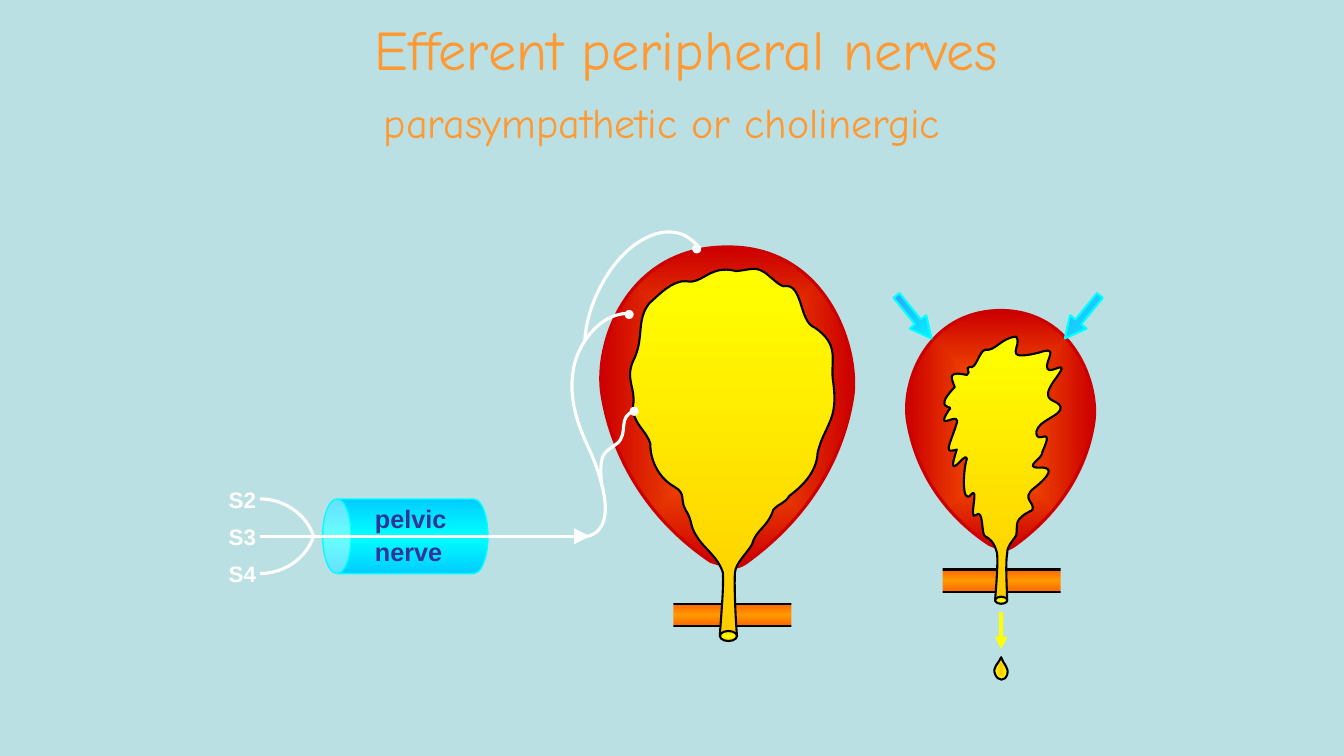
from lxml import etree
from pptx import Presentation
from pptx.dml.color import RGBColor
from pptx.enum import shapes, text
from pptx.oxml.ns import qn
from pptx.util import Inches, Pt

SHAPE = shapes.MSO_SHAPE
SKY = RGBColor(0xBB, 0xE0, 0xE3)
TITLE_ORANGE = RGBColor(0xFF, 0x99, 0x33)
MUSCLE_ORANGE = RGBColor(0xFF, 0x66, 0x00)
SPHINCTER_ORANGE = RGBColor(0xFF, 0x99, 0x00)
RED = RGBColor(0xCC, 0x00, 0x00)
YELLOW = RGBColor(0xFF, 0xFF, 0x00)
GOLD = RGBColor(0xFF, 0xCC, 0x00)
BLUE = RGBColor(0x33, 0x99, 0xFF)
LIGHT_BLUE = RGBColor(0x00, 0xCC, 0xFF)
CYAN = RGBColor(0x00, 0xFF, 0xFF)
NAVY = RGBColor(0x33, 0x33, 0x99)
WHITE = RGBColor(0xFF, 0xFF, 0xFF)
BLACK = RGBColor(0x00, 0x00, 0x00)

# Outlines: a start point, then two control points and an end point per curve.
FULL_BODY = [
    (7.05, 5.57), (6.35, 5.1), (6.05, 4.43), (5.97, 3.91), (5.89, 3.4), (6.22, 2.45), (7.21, 2.45),
    (8.2, 2.44), (8.52, 3.45), (8.46, 3.92), (8.39, 4.4), (8.13, 5.06), (7.39, 5.59),
    (7.27, 5.66), (7.22, 5.62), (7.05, 5.57)]
FULL_LUMEN = [
    (7.14, 6.31), (7.15, 6.13), (7.18, 5.83), (7.17, 5.68), (7.12, 5.52), (6.97, 5.43), (6.91, 5.32),
    (6.84, 5.22), (6.87, 5.16), (6.8, 5.06), (6.74, 4.95), (6.81, 4.9), (6.69, 4.83),
    (6.56, 4.76), (6.45, 4.6), (6.45, 4.4), (6.42, 4.28), (6.26, 4.19), (6.28, 4.02),
    (6.31, 3.85), (6.19, 3.76), (6.29, 3.56), (6.39, 3.35), (6.31, 3.17), (6.44, 3.01),
    (6.54, 2.92), (6.67, 2.78), (6.81, 2.79), (6.96, 2.83), (7.04, 2.62), (7.3, 2.69),
    (7.43, 2.68), (7.46, 2.65), (7.54, 2.68), (7.62, 2.71), (7.7, 2.82), (7.77, 2.84),
    (7.97, 2.8), (7.92, 3.19), (8.08, 3.25), (8.33, 3.42), (8.24, 3.57), (8.26, 3.76),
    (8.29, 3.96), (8.28, 4.09), (8.22, 4.21), (8.17, 4.33), (8.15, 4.34), (8.11, 4.49),
    (8.1, 4.71), (7.92, 4.85), (7.83, 4.92), (7.77, 5.01), (7.74, 4.98), (7.67, 5.06),
    (7.61, 5.24), (7.5, 5.25), (7.46, 5.4), (7.41, 5.49), (7.3, 5.58), (7.29, 5.68),
    (7.28, 5.83), (7.3, 6.2), (7.31, 6.31), (7.2, 6.33), (7.22, 6.32), (7.14, 6.31)]
EMPTY_BODY = [
    (9.81, 5.4), (9.28, 5.05), (9.06, 4.56), (9, 4.17), (8.94, 3.79), (9.19, 3.09), (9.92, 3.08),
    (10.66, 3.08), (10.9, 3.83), (10.85, 4.18), (10.8, 4.54), (10.6, 5.03), (10.05, 5.42),
    (9.97, 5.47), (9.93, 5.45), (9.81, 5.4)]
EMPTY_LUMEN = [
    (9.87, 5.96), (9.88, 5.82), (9.9, 5.6), (9.89, 5.49), (9.86, 5.37), (9.81, 5.34), (9.77, 5.32),
    (9.73, 5.3), (9.76, 5.04), (9.68, 5.11), (9.6, 5.18), (9.72, 4.8), (9.63, 4.91),
    (9.54, 5.01), (9.55, 4.68), (9.59, 4.55), (9.58, 4.46), (9.37, 4.83), (9.49, 4.46),
    (9.36, 4.5), (9.41, 4.44), (9.48, 4.23), (9.56, 4.03), (9.25, 4.32), (9.41, 4.07),
    (9.49, 4.01), (9.23, 4.09), (9.47, 3.84), (9.43, 3.74), (9.4, 3.68), (9.59, 3.72),
    (9.64, 3.69), (9.56, 3.65), (9.62, 3.64), (9.68, 3.67), (9.71, 3.49), (9.77, 3.47),
    (9.87, 3.49), (9.93, 3.35), (10.08, 3.34), (10.15, 3.43), (9.92, 3.59), (10.3, 3.5),
    (10.53, 3.42), (10.35, 3.59), (10.39, 3.66), (10.42, 3.72), (10.64, 3.53), (10.46, 3.77),
    (10.29, 4.01), (10.5, 3.95), (10.52, 4.04), (10.53, 4.13), (10.31, 4.16), (10.28, 4.28),
    (10.27, 4.44), (10.47, 4.19), (10.34, 4.48), (10.35, 4.55), (10.14, 4.64), (10.31, 4.64),
    (10.47, 4.63), (10.4, 4.73), (10.26, 4.84), (10.12, 4.95), (10.27, 4.98), (10.24, 5.06),
    (10.04, 5.16), (10.1, 5.2), (10.08, 5.31), (10.04, 5.38), (9.99, 5.41), (9.99, 5.49),
    (9.97, 5.6), (9.99, 5.88), (9.99, 5.96), (9.91, 5.97), (9.93, 5.96), (9.87, 5.96)]
DROP = [(9.93, 6.52), (9.9, 6.59), (9.84, 6.62), (9.87, 6.69), (9.9, 6.76), (9.97, 6.76), (9.99, 6.69),
        (10.01, 6.62), (9.95, 6.59), (9.93, 6.52)]
NERVE_BRANCHES = [
    [(6.94, 2.46), (6.89, 2.4), (6.84, 2.36), (6.78, 2.33), (6.5, 2.21), (6.12, 2.47), (5.92, 2.92),
     (5.85, 3.07), (5.81, 3.23), (5.8, 3.38)],
    [(6.29, 4.08), (6.12, 4.13), (6.24, 4.3), (6.12, 4.4), (6, 4.49), (5.93, 4.48), (5.97, 4.83)],
    [(6.22, 3.11), (5.96, 3.11), (5.71, 3.41), (5.68, 3.71), (5.64, 4.02), (5.77, 4.3), (5.85, 4.47),
     (5.93, 4.65), (6.2, 5.32), (5.75, 5.33)]]
NERVE_ENDINGS = [(6.2, 3.08), (6.87, 2.43), (6.25, 4.04)]
ROOT_Y, ROOT_GAP = 5.32, 0.37


def set_gradient(sp, colors, angle=None, path="rect"):
    """Fill with evenly spaced stops: linear at a clockwise angle, or outward from the centre."""
    sp.fill.gradient()
    grad = sp._element.spPr.find(qn("a:gradFill"))
    for child in list(grad):
        grad.remove(child)
    grad.set("rotWithShape", "0")
    stops = etree.SubElement(grad, qn("a:gsLst"))
    for i, color in enumerate(colors):
        gs = etree.SubElement(stops, qn("a:gs"), pos=str(100000 * i // (len(colors) - 1)))
        etree.SubElement(gs, qn("a:srgbClr"), val=str(color))
    if angle is None:
        centre = etree.SubElement(grad, qn("a:path"), path=path)
        etree.SubElement(centre, qn("a:fillToRect"), dict.fromkeys("ltrb", "50000"))
    else:
        etree.SubElement(grad, qn("a:lin"), ang=str(angle * 60000), scaled="0")


def set_line(sp, color, width):
    sp.line.color.rgb = color
    sp.line.width = Pt(width)


def add_preset(s, kind, left, top, width, height, color=None):
    sp = s.shapes.add_shape(kind, Inches(left), Inches(top), Inches(width), Inches(height))
    sp.shadow.inherit = False
    sp.line.fill.background()
    if color is not None:
        sp.fill.solid()
        sp.fill.fore_color.rgb = color
    return sp


def sample_curves(points, steps=12):
    """Points along a chain of cubic Bezier curves, used to find its extent."""
    for i in range(0, len(points) - 1, 3):
        for step in range(1, steps + 1):
            t = step / steps
            weights = ((1 - t) ** 3, 3 * t * (1 - t) ** 2, 3 * t * t * (1 - t), t ** 3)
            yield tuple(Inches(sum(w * p[axis] for w, p in zip(weights, points[i:i + 4])))
                        for axis in (0, 1))


def add_curve(s, points, color, width):
    """A freeform sized by its sampled extent, whose segments are then made cubic curves."""
    builder = s.shapes.build_freeform(Inches(points[0][0]), Inches(points[0][1]))
    builder.add_line_segments(list(sample_curves(points)), close=points[0] == points[-1])
    sp = builder.convert_to_shape()
    outline = next(sp._element.iter(qn("a:path")))
    for segment in outline.findall(qn("a:lnTo")):
        outline.remove(segment)
    for i in range(1, len(points), 3):
        curve = etree.Element(qn("a:cubicBezTo"))
        for x, y in points[i:i + 3]:
            etree.SubElement(curve, qn("a:pt"), x=str(Inches(x) - sp.left), y=str(Inches(y) - sp.top))
        outline.insert(1 + i // 3, curve)
    sp.shadow.inherit = False
    sp.fill.background()
    set_line(sp, color, width)
    return sp


def add_arrow(s, x1, y1, x2, y2, color, width, head="med"):
    line = s.shapes.add_connector(shapes.MSO_CONNECTOR.STRAIGHT,
                                  Inches(x1), Inches(y1), Inches(x2), Inches(y2))
    set_line(line, color, width)
    etree.SubElement(line.line._get_or_add_ln(), qn("a:tailEnd"), type="triangle", w=head, len=head)
    etree.SubElement(line._element.spPr, qn("a:effectLst"))


def add_label(s, box, words, size, color, font="Arial", bold=True, spacing=None):
    sp = s.shapes.add_textbox(*map(Inches, box))
    tf = sp.text_frame
    tf.text = words
    tf.word_wrap = False
    tf.auto_size = text.MSO_AUTO_SIZE.SHAPE_TO_FIT_TEXT
    for p in tf.paragraphs:
        p.line_spacing = spacing
        for r in p.runs:
            r.font.name, r.font.size, r.font.bold = font, Pt(size), bold
            r.font.color.rgb = color


def add_bladder(s, body, lumen, bar_left, bar_top, mask_top, outlet):
    set_gradient(add_curve(s, body, RED, 2.25), [MUSCLE_ORANGE, RED])
    bar = add_preset(s, SHAPE.RECTANGLE, bar_left, bar_top, 1.22, 0.22)
    set_gradient(bar, [MUSCLE_ORANGE, SPHINCTER_ORANGE, MUSCLE_ORANGE], 90)
    set_line(bar, BLACK, 1.5)
    set_gradient(add_curve(s, lumen, BLACK, 1.5), [YELLOW, GOLD], 90)
    for dx in (-0.09, 1.2):
        add_preset(s, SHAPE.RECTANGLE, bar_left + dx, mask_top, 0.12, 0.49, SKY)
    opening = add_preset(s, SHAPE.OVAL, *outlet)
    set_gradient(opening, [YELLOW, GOLD], path="shape")
    set_line(opening, BLACK, 1.5)


def add_contraction_arrow(s, left, rotation):
    sp = add_preset(s, SHAPE.RIGHT_ARROW, left, 3.04, 0.55, 0.21)
    sp.adjustments[0], sp.adjustments[1] = 0.354, 1.008
    sp.rotation = rotation
    set_gradient(sp, [BLUE, CYAN], 45)
    set_line(sp, CYAN, 1.5)


def add_pelvic_nerve(s):
    can = add_preset(s, SHAPE.CAN, 3.65, 4.5, 0.74, 1.64)
    can.adjustments[0] = 0.383
    can.rotation = 270
    set_gradient(can, [LIGHT_BLUE, CYAN, LIGHT_BLUE], 90)
    set_line(can, CYAN, 1)
    add_label(s, (3.62, 4.91, 0.91, 0.76), "pelvic\nnerve", 18, NAVY, spacing=1.1)
    for points in NERVE_BRANCHES:
        add_curve(s, points, WHITE, 2.25)
    for left, top in NERVE_ENDINGS:
        set_line(add_preset(s, SHAPE.OVAL, left, top, 0.08, 0.08, WHITE), WHITE, 0.75)
    for side, root in zip((-1, 0, 1), ("S2", "S3", "S4")):
        add_label(s, (2.17, ROOT_Y - 0.18 + side * ROOT_GAP, 0.48, 0.37), root, 16, WHITE)
        if side:
            bends = [(2.58, 1), (2.82, 1), (3.04, 0.59), (3.11, 0)]
            add_curve(s, [(x, ROOT_Y + side * ROOT_GAP * k) for x, k in bends], WHITE, 2.25)
    add_arrow(s, 2.58, ROOT_Y, 5.85, ROOT_Y, WHITE, 2.25, "lg")


def main():
    prs = Presentation()
    prs.slide_width, prs.slide_height = Inches(13.33), Inches(7.5)
    s = prs.slides.add_slide(prs.slide_layouts[6])
    s.background.fill.solid()
    s.background.fill.fore_color.rgb = SKY
    add_label(s, (3.62, 0.1, 7.24, 0.77), "Efferent peripheral nerves", 40, TITLE_ORANGE, "Comic Neue", False)
    add_label(s, (3.71, 0.91, 6.19, 0.6), "parasympathetic or cholinergic", 30, TITLE_ORANGE,
              "Comic Neue", False)
    add_bladder(s, FULL_BODY, FULL_LUMEN, 6.65, 5.99, 5.78, (7.14, 6.26, 0.17, 0.1))
    add_bladder(s, EMPTY_BODY, EMPTY_LUMEN, 9.32, 5.65, 5.55, (9.87, 5.92, 0.12, 0.07))
    set_gradient(add_curve(s, DROP, BLACK, 1.5), [GOLD, YELLOW])
    add_arrow(s, 9.93, 6.07, 9.93, 6.44, YELLOW, 3)
    add_contraction_arrow(s, 8.79, 50.9)
    add_contraction_arrow(s, 10.46, 129.1)
    add_pelvic_nerve(s)
    prs.save("out.pptx")


if __name__ == "__main__":
    main()
